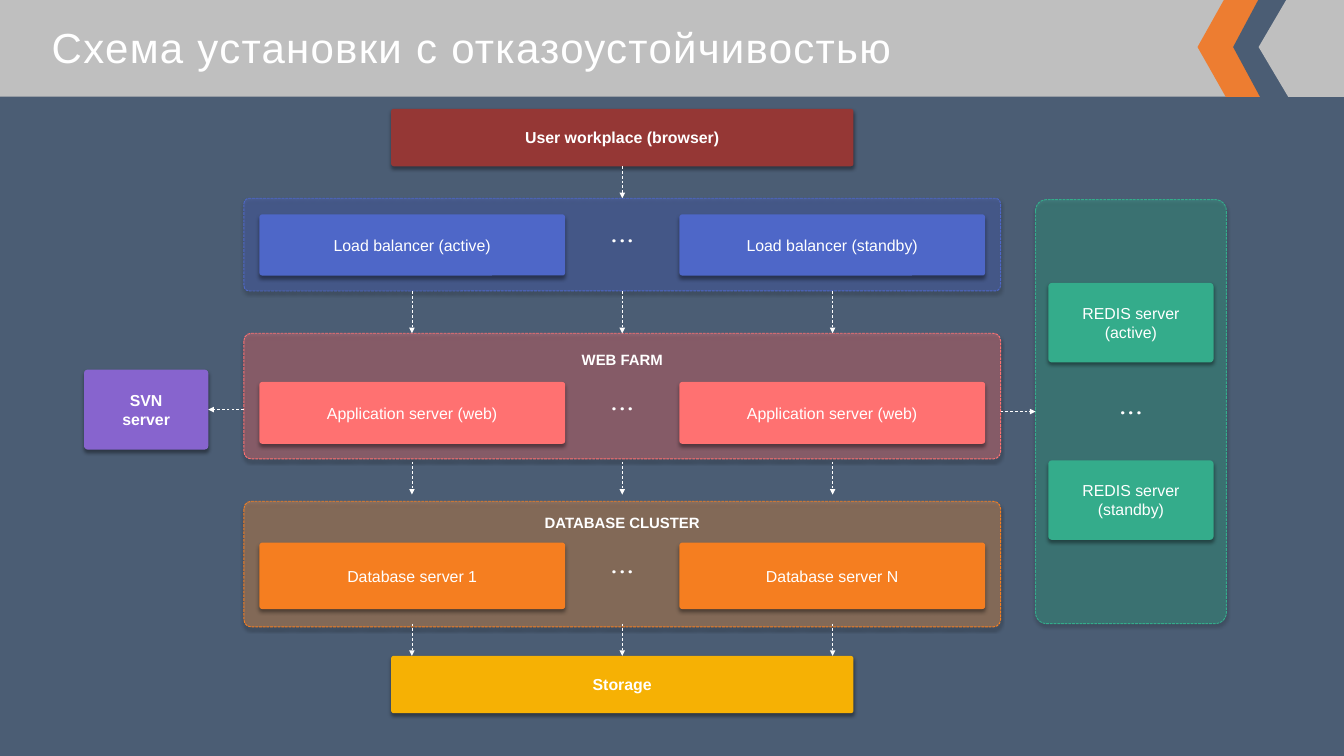
from dataclasses import dataclass

from lxml import etree
from pptx import Presentation
from pptx.dml.color import RGBColor
from pptx.enum.dml import MSO_LINE
from pptx.enum.shapes import MSO_CONNECTOR, MSO_SHAPE
from pptx.enum.text import MSO_ANCHOR, MSO_AUTO_SIZE, PP_ALIGN
from pptx.oxml.ns import qn
from pptx.util import Inches, Pt

ROUNDED, RECTANGLE = MSO_SHAPE.ROUNDED_RECTANGLE, MSO_SHAPE.RECTANGLE
STRAIGHT = MSO_CONNECTOR.STRAIGHT
DASH, FINE_DASH = MSO_LINE.DASH, MSO_LINE.SQUARE_DOT
MIDDLE, TOP_ANCHOR = MSO_ANCHOR.MIDDLE, MSO_ANCHOR.TOP
CENTER, LEFT_ALIGN = PP_ALIGN.CENTER, PP_ALIGN.LEFT
TOP, LEFT, BOTTOM, RIGHT = range(4)  # connection sites


@dataclass(frozen=True)
class Theme:
    font: str = "Arial"
    dots_font: str = "Karla"
    title_size: int = 45
    title_leading: int = 54
    node_size: int = 17
    label_size: int = 16
    white: str = "FFFFFF"
    slate: str = "4B5D74"
    header: str = "BFBFBF"
    accent: str = "ED7D31"
    user: str = "953735"
    storage: str = "F6B104"
    svn: str = "8764CE"
    redis: str = "34AC8B"
    balancer: str = "4E67C8"
    farm: str = "FF7171"
    database: str = "F57E20"
    database_tint: str = "F79646"


THEME = Theme()

# Content; the grid has 100 square cells across the slide
TITLE = "Схема установки с отказоустойчивостью"
DOTS = "• • •"
TIERS = [
    dict(top=14.75, height=6.9, node_top=15.95, node_height=4.55,
         color=THEME.balancer, tint=THEME.balancer, label=None, label_top=None,
         nodes=["Load balancer (active)", "Load balancer (standby)"]),
    dict(top=24.8, height=9.35, node_top=28.42, node_height=4.6,
         color=THEME.farm, tint=THEME.farm, label="WEB FARM", label_top=25.8,
         nodes=["Application server (web)", "Application server (web)"]),
    dict(top=37.3, height=9.35, node_top=40.37, node_height=4.95,
         color=THEME.database, tint=THEME.database_tint,
         label="DATABASE CLUSTER", label_top=37.95,
         nodes=["Database server 1", "Database server N"]),
]
REDIS_NODES = [("REDIS server\n(active)", 21.05), ("REDIS server\n(standby)", 34.25)]
ENDS = [("User workplace (browser)", 8.1, THEME.user),
        ("Storage", 48.8, THEME.storage)]
# Header hexagons: colour and the four column positions of their corners
HEXAGONS = [(THEME.accent, (89.1, 91.2, 95.4, 97.5)),
            (THEME.slate, (91.75, 93.75, 97.7, 99.65)),
            (THEME.header, (93.65, 95.85, 100.25, 102.45))]
HEXAGON_ROWS = (-0.25, 3.5, 7.2)

# Grid
TIER_LEFT, TIER_WIDTH, TIER_PAD = 18.15, 56.3, 1.15
TIER_RIGHT = TIER_LEFT + TIER_WIDTH
CENTRE = TIER_LEFT + TIER_WIDTH / 2
NODE_WIDTH, END_WIDTH, END_HEIGHT = 22.75, 34.4, 4.27
REDIS_LEFT, REDIS_TOP, REDIS_WIDTH, REDIS_HEIGHT = 77.05, 14.85, 14.2, 31.55
REDIS_NODE_WIDTH, REDIS_NODE_HEIGHT = 12.3, 5.92
SVN_BOX = (6.25, 27.5, 9.25, 5.95)
ARROW_OFFSET = 15.65

deck = Presentation()
deck.slide_width, deck.slide_height = Inches(20), Inches(11.25)
slide = deck.slides.add_slide(deck.slide_layouts[5])
slide.background.fill.solid()
slide.background.fill.fore_color.rgb = RGBColor.from_string(THEME.slate)


def cells(*counts):
    return [round(count * deck.slide_width / 100) for count in counts]


def paint(shape, color):
    shape.shadow.inherit = False
    shape.line.fill.background()
    shape.fill.solid()
    shape.fill.fore_color.rgb = RGBColor.from_string(color)


def add_shadow(shape):
    effects = shape.element.spPr.find(qn("a:effectLst"))
    shadow = etree.SubElement(effects, qn("a:outerShdw"), blurRad=str(Pt(4)),
                              dist=str(Pt(3)), dir="5400000", rotWithShape="0")
    black = etree.SubElement(shadow, qn("a:srgbClr"), val="000000")
    etree.SubElement(black, qn("a:alpha"), val="40000")


def style(run, size, bold=False, font=THEME.font):
    run.font.name, run.font.size, run.font.bold = font, Pt(size), bold
    run.font.color.rgb = RGBColor.from_string(THEME.white)


def add_box(left, top, width, height, color=None, text="", corner=0.046,
            size=THEME.node_size, bold=False, font=THEME.font):
    box = slide.shapes.add_shape(ROUNDED, *cells(left, top, width, height))
    box.adjustments[0] = corner
    if color:
        paint(box, color)
        add_shadow(box)
    else:
        box.shadow.inherit = False
        box.fill.background()
        box.line.fill.background()
    if text:
        box.text_frame.vertical_anchor = MIDDLE
        paragraph = box.text_frame.paragraphs[0]
        paragraph.alignment = CENTER
        for number, line in enumerate(text.split("\n")):
            if number:
                paragraph.add_line_break()
            run = paragraph.add_run()
            run.text = line
            style(run, size, bold, font)
    return box


def add_panel(left, top, width, height, tint, edge):
    panel = add_box(left, top, width, height, tint, corner=0.058)
    color = panel.element.spPr.find(qn("a:solidFill"))[0]
    etree.SubElement(color, qn("a:alpha"), val="37000")
    panel.line.color.rgb = RGBColor.from_string(edge)
    panel.line.width, panel.line.dash_style = Pt(1), FINE_DASH
    return panel


def add_dots(centre, middle):
    add_box(centre - 7.6, middle - 2.7, 15.2, 5.4, text=DOTS, font=THEME.dots_font)


def add_arrow(x1, y1, x2, y2, start=None, end=None):
    arrow = slide.shapes.add_connector(STRAIGHT, *cells(x1, y1, x2, y2))
    arrow.line.color.rgb = RGBColor.from_string(THEME.white)
    arrow.line.width, arrow.line.dash_style = Pt(0.75), DASH
    etree.SubElement(arrow.line._get_or_add_ln(), qn("a:tailEnd"), type="triangle")
    etree.SubElement(arrow.element.spPr, qn("a:effectLst"))
    if start:
        arrow.begin_connect(*start)
    if end:
        arrow.end_connect(*end)


# Header band and title
band = slide.shapes.add_shape(RECTANGLE, *cells(0, 0, 93.5, 7.2))
paint(band, THEME.header)
title = slide.shapes.title
title.element.addprevious(band.element)
title.left, title.top, title.width, title.height = cells(3.85, 1.6, 72.65, 3.85)
frame = title.text_frame
frame.margin_left = frame.margin_top = frame.margin_right = frame.margin_bottom = 0
frame.word_wrap, frame.auto_size = True, MSO_AUTO_SIZE.SHAPE_TO_FIT_TEXT
frame.vertical_anchor = TOP_ANCHOR
heading = frame.paragraphs[0]
heading.alignment, heading.line_spacing = LEFT_ALIGN, Pt(THEME.title_leading)
heading_run = heading.add_run()
heading_run.text = TITLE
style(heading_run, THEME.title_size)
heading_run.font._element.set("spc", "140")

# Header hexagons
upper, waist, lower = HEXAGON_ROWS
for color, (west, inner_west, inner_east, east) in HEXAGONS:
    corners = [(inner_east, upper), (inner_west, upper), (west, waist),
               (inner_west, lower), (inner_east, lower), (east, waist)]
    outline = slide.shapes.build_freeform(*cells(*corners[0]))
    outline.add_line_segments([cells(*corner) for corner in corners[1:]], close=True)
    paint(outline.convert_to_shape(), color)

# Server tiers
panels = []
for tier in TIERS:
    panels.append(add_panel(TIER_LEFT, tier["top"], TIER_WIDTH, tier["height"],
                            tier["tint"], tier["color"]))
    lefts = (TIER_LEFT + TIER_PAD, TIER_RIGHT - TIER_PAD - NODE_WIDTH)
    for left, name in zip(lefts, tier["nodes"]):
        add_box(left, tier["node_top"], NODE_WIDTH, tier["node_height"],
                tier["color"], name)
    add_dots(CENTRE, tier["node_top"] + tier["node_height"] / 2 - 0.45)
    if tier["label"]:
        add_box(CENTRE - NODE_WIDTH / 2, tier["label_top"], NODE_WIDTH, 1.85,
                text=tier["label"], size=THEME.label_size, bold=True)
balancers, farm, databases = panels

# Redis column, SVN and the two ends of the chain
redis = add_panel(REDIS_LEFT, REDIS_TOP, REDIS_WIDTH, REDIS_HEIGHT,
                  THEME.redis, THEME.redis)
redis_centre = REDIS_LEFT + REDIS_WIDTH / 2
for name, top in REDIS_NODES:
    add_box(redis_centre - REDIS_NODE_WIDTH / 2, top, REDIS_NODE_WIDTH,
            REDIS_NODE_HEIGHT, THEME.redis, name)
add_dots(redis_centre, REDIS_TOP + REDIS_HEIGHT / 2)
svn = add_box(*SVN_BOX, THEME.svn, "SVN\nserver", bold=True)
user, storage = [add_box(CENTRE - END_WIDTH / 2, top, END_WIDTH, END_HEIGHT,
                         color, name, bold=True) for name, top, color in ENDS]

# Arrows: three per gap below each tier, then the single ones
GAPS = [(21.65, 24.8, (balancers, BOTTOM), (farm, TOP)),
        (34.35, 36.8, None, None),
        (46.4, 48.8, None, (storage, TOP))]
for y1, y2, start, end in GAPS:
    add_arrow(CENTRE, y1, CENTRE, y2, start, end)
    for x in (CENTRE - ARROW_OFFSET, CENTRE + ARROW_OFFSET):
        add_arrow(x, y1, x, y2)
add_arrow(CENTRE, 12.4, CENTRE, 14.75, (user, BOTTOM), (balancers, TOP))
redis_middle = REDIS_TOP + REDIS_HEIGHT / 2
add_arrow(TIER_RIGHT, redis_middle, REDIS_LEFT, redis_middle, end=(redis, LEFT))
svn_left, svn_top, svn_width, svn_height = SVN_BOX
svn_middle = svn_top + svn_height / 2
add_arrow(TIER_LEFT, svn_middle, svn_left + svn_width, svn_middle, end=(svn, RIGHT))

deck.save("out.pptx")
